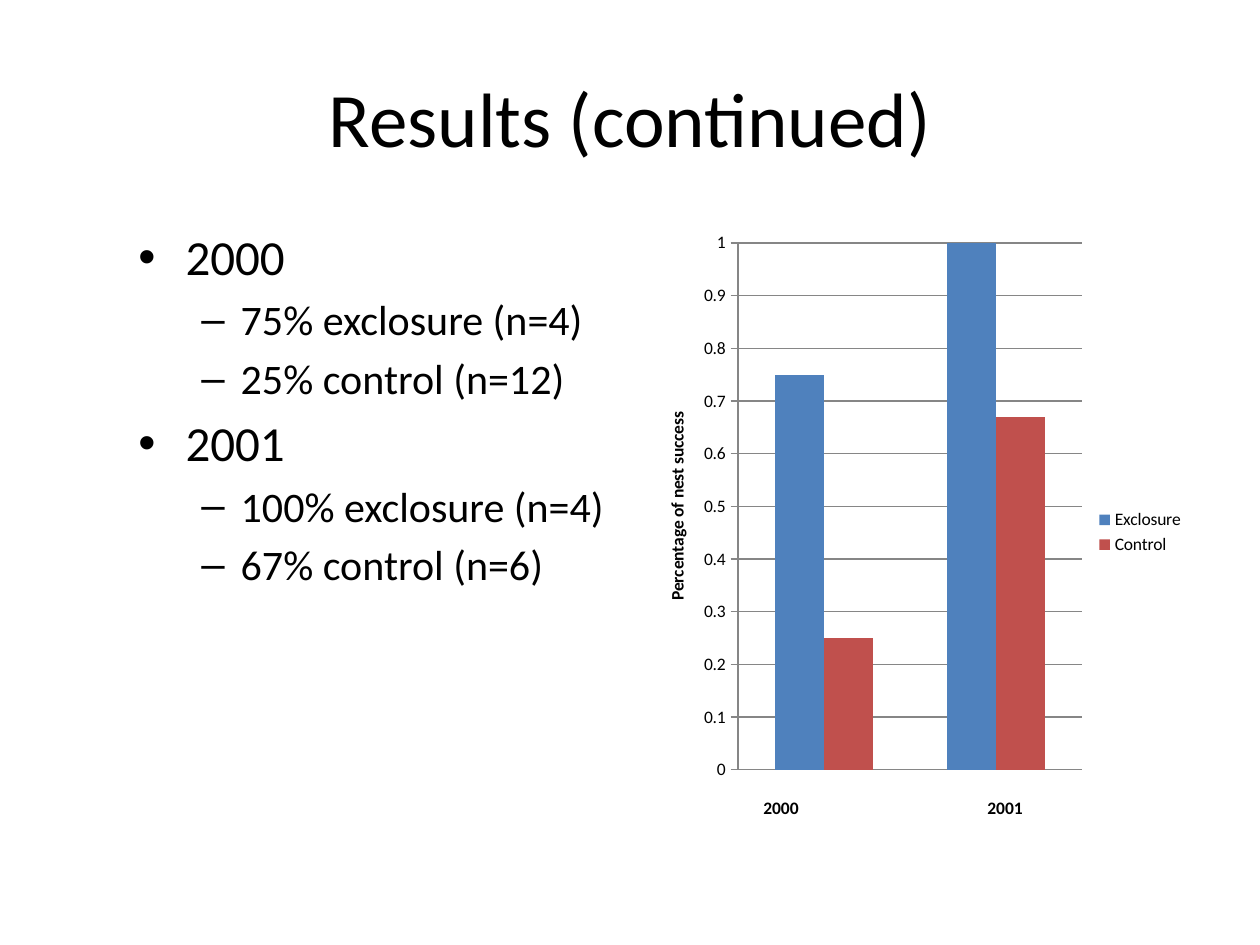
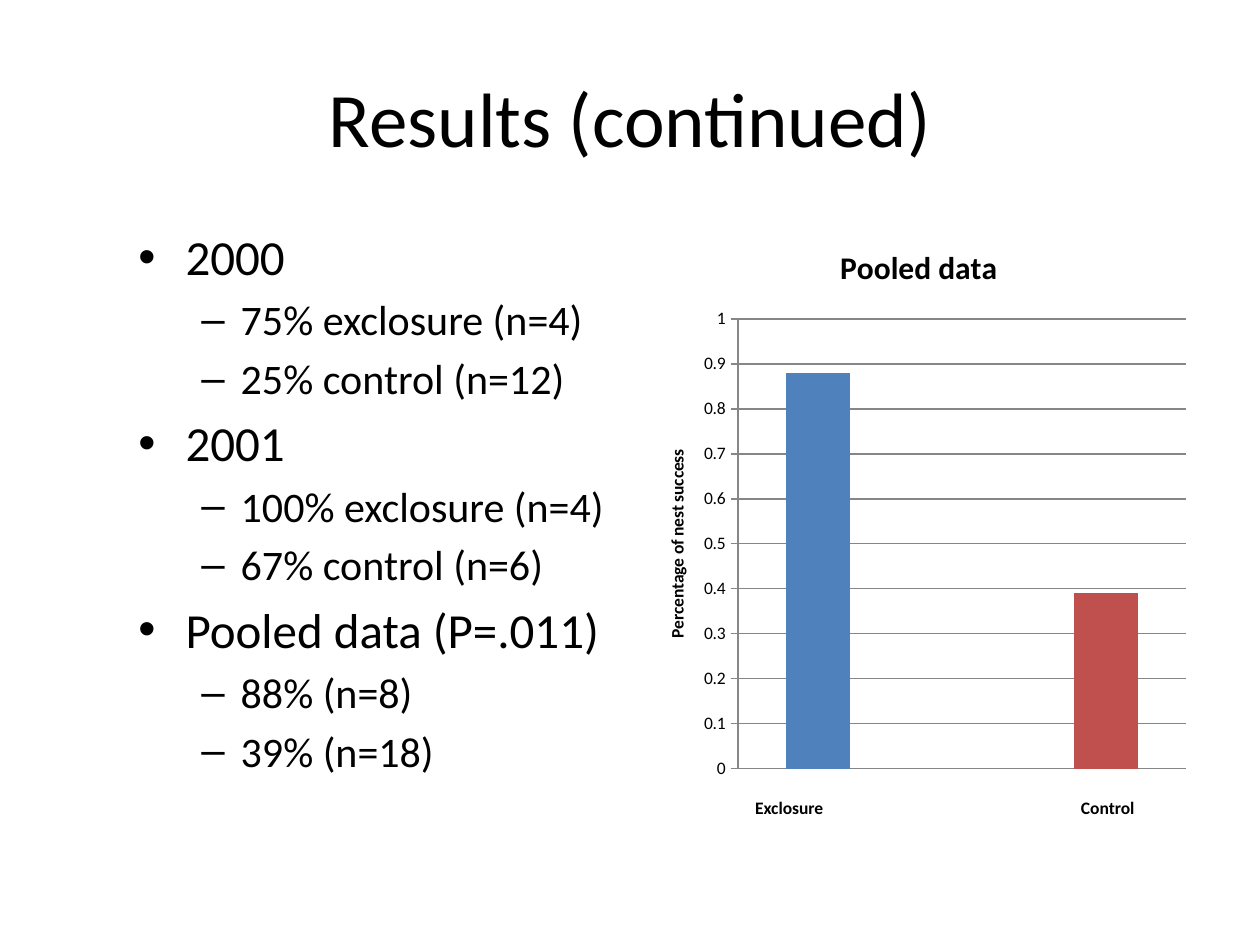
from lxml import etree
from pptx import Presentation, util as u
from pptx.chart.data import CategoryChartData
from pptx.dml.color import RGBColor
from pptx.enum import chart as ch, text as tx
from pptx.oxml.ns import qn

FONT = "Calibri"
BLACK, GRID = "000000", "868686"
EXCLOSURE, CONTROL = "4F81BD", "C0504D"

HEADING = "Results (continued)"
AXIS_TITLE = "Percentage of nest success"
YEARLY = [
    ("2000", ["75% exclosure (n=4)", "25% control (n=12)"]),
    ("2001", ["100% exclosure (n=4)", "67% control (n=6)"]),
]
POOLED = [("Pooled data (P=.011)", ["88% (n=8)", "39% (n=18)"])]

SLIDES = [
    dict(findings=YEARLY, chart_title=None, legend=True,
         success=[("Exclosure", (0.75, 1), EXCLOSURE), ("Control", (0.25, 0.67), CONTROL)],
         plot=(421.7, 138.9, 196.6, 301.1),
         captions=[("2000", 446.3), ("2001", 574.3)]),
    dict(findings=YEARLY + POOLED, chart_title="Pooled data", legend=False,
         success=[("Series 1", (0.88, None), EXCLOSURE), ("Series 2", (None, 0.39), CONTROL)],
         plot=(421.7, 182.3, 256, 257.1),
         captions=[("Exclosure", 451), ("Control", 633)]),
]

HEADING_BOX = (36, 21.6, 648, 90)
FINDINGS_BOX = (72, 126, 282, 356.4)
CHART_BOX = (366, 126, 318, 356.4)
CAPTION_WIDTH, CAPTION_HEIGHT, CAPTION_MIDDLE = 80, 22, 461.5
LEVELS = [dict(size=28, bullet="•", indent=27, hanging=27),
          dict(size=24, bullet="–", indent=58.5, hanging=22.5)]


def rgb(color):
    return RGBColor.from_string(color)


def style(font, size, bold=False, color=BLACK):
    font.name, font.size, font.bold = FONT, u.Pt(size), bold
    font.color.rgb = rgb(color)


def write(frame, words, size=24, bold=False, align=tx.PP_ALIGN.LEFT,
          bullet=None, indent=0, hanging=0):
    first = not frame.paragraphs[0].runs
    paragraph = frame.paragraphs[0] if first else frame.add_paragraph()
    paragraph.alignment = align
    if bullet:
        if not first:
            paragraph.space_before = u.Pt(size * 0.2)
        properties = paragraph._p.get_or_add_pPr()
        properties.set("marL", str(u.Pt(indent)))
        properties.set("indent", str(-u.Pt(hanging)))
        etree.SubElement(properties, qn("a:buFont")).set("typeface", "Arial")
        etree.SubElement(properties, qn("a:buChar")).set("char", bullet)
    run = paragraph.add_run()
    run.text = words
    style(run.font, size, bold)


def text_frame(slide, box, anchor=tx.MSO_ANCHOR.TOP):
    frame = slide.shapes.add_textbox(*map(u.Pt, box)).text_frame
    frame.word_wrap = True
    frame.vertical_anchor = anchor
    return frame


def place_plot(chart, plot):
    left, top, width, height = CHART_BOX
    fractions = dict(x=(plot[0] - left) / width, y=(plot[1] - top) / height,
                     w=plot[2] / width, h=plot[3] / height)
    plot_area = chart._chartSpace.chart.plotArea
    for old in plot_area.findall(qn("c:layout")):
        plot_area.remove(old)
    layout = etree.Element(qn("c:layout"))
    plot_area.insert(0, layout)
    manual = etree.SubElement(layout, qn("c:manualLayout"))
    settings = [("layoutTarget", "inner"), ("xMode", "edge"), ("yMode", "edge")]
    settings += [(key, f"{value:.4f}") for key, value in fractions.items()]
    for key, value in settings:
        etree.SubElement(manual, qn(f"c:{key}")).set("val", value)


def add_success_chart(slide, success, chart_title, legend, plot):
    data = CategoryChartData()
    data.categories = ["1", "2"]
    for name, values, _ in success:
        data.add_series(name, values)
    chart = slide.shapes.add_chart(ch.XL_CHART_TYPE.COLUMN_CLUSTERED,
                                   *map(u.Pt, CHART_BOX), data).chart
    style(chart.font, 10)
    chart.has_title = bool(chart_title)
    if chart_title:
        write(chart.chart_title.text_frame, chart_title, size=18, bold=True,
              align=tx.PP_ALIGN.CENTER)
    chart.has_legend = legend
    if legend:
        chart.legend.position = ch.XL_LEGEND_POSITION.RIGHT
        chart.legend.include_in_layout = False
        style(chart.legend.font, 10)

    columns = chart.plots[0]
    columns.gap_width, columns.overlap = 150, 0
    columns.vary_by_categories = False
    for series, (_, _, color) in zip(columns.series, success):
        series.format.fill.solid()
        series.format.fill.fore_color.rgb = rgb(color)

    chart.category_axis.visible = False
    axis = chart.value_axis
    axis.minimum_scale, axis.maximum_scale, axis.major_unit = 0, 1, 0.1
    axis.major_tick_mark = ch.XL_TICK_MARK.OUTSIDE
    axis.has_major_gridlines = True
    for line in (axis.format.line, axis.major_gridlines.format.line):
        line.color.rgb = rgb(GRID)
        line.width = u.Pt(0.75)
    write(axis.axis_title.text_frame, AXIS_TITLE, size=10, bold=True,
          align=tx.PP_ALIGN.CENTER)
    place_plot(chart, plot)


def build_slide(deck, findings, captions, **chart_parts):
    slide = deck.slides.add_slide(deck.slide_layouts[6])
    write(text_frame(slide, HEADING_BOX, tx.MSO_ANCHOR.MIDDLE), HEADING, size=44,
          align=tx.PP_ALIGN.CENTER)
    findings_frame = text_frame(slide, FINDINGS_BOX)
    for group, rates in findings:
        write(findings_frame, group, **LEVELS[0])
        for rate in rates:
            write(findings_frame, rate, **LEVELS[1])
    add_success_chart(slide, **chart_parts)
    for caption, middle in captions:
        box = (middle - CAPTION_WIDTH / 2, CAPTION_MIDDLE - CAPTION_HEIGHT / 2,
               CAPTION_WIDTH, CAPTION_HEIGHT)
        write(text_frame(slide, box, tx.MSO_ANCHOR.MIDDLE), caption, size=10, bold=True,
              align=tx.PP_ALIGN.CENTER)


def main():
    deck = Presentation()
    deck.slide_width, deck.slide_height = u.Pt(720), u.Pt(540)
    for parts in SLIDES:
        build_slide(deck, **parts)
    deck.save("out.pptx")


if __name__ == "__main__":
    main()
